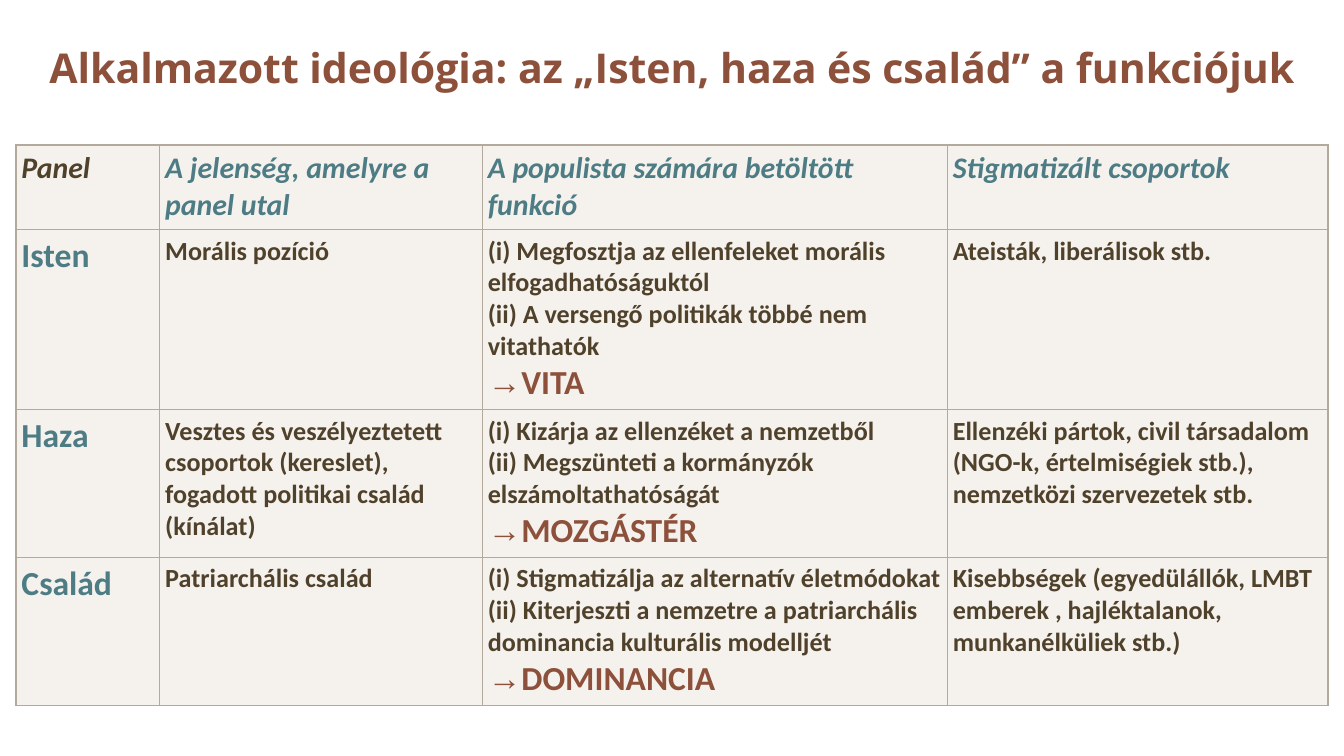
from copy import deepcopy

from lxml.etree import SubElement
from pptx import Presentation
from pptx.dml.color import RGBColor
from pptx.enum.text import MSO_ANCHOR, MSO_AUTO_SIZE, PP_ALIGN
from pptx.oxml.ns import qn
from pptx.util import Inches, Pt

COLORS = {
    "brown": "8D503B",
    "teal": "4D7C85",
    "dark": "50412B",
    "border": "B3A99D",
    "cell": "EFEAE4",
}
FORMATS = {
    "title": {"name": "Open Sans", "size": Pt(22), "bold": True, "color": "brown"},
    "corner": {"name": "Calibri", "size": Pt(16), "bold": True, "italic": True, "color": "dark"},
    "header": {"name": "Calibri", "size": Pt(16), "bold": True, "italic": True, "color": "teal"},
    "panel": {"name": "Calibri", "size": Pt(18), "bold": True, "italic": False, "color": "teal"},
    "body": {"name": "Calibri", "size": Pt(14), "bold": True, "italic": False, "color": "dark"},
    "result": {"name": "Calibri", "size": Pt(18), "bold": True, "italic": False, "color": "brown"},
}
ARROW = "→"
COLUMN_WIDTHS = [1.07, 2.4, 3.46, 2.83]
ROW_HEIGHTS = [0.63, 1.34, 1.1, 1.1]
# Each cell is a list of paragraphs; one that starts with the arrow is a result bullet.
ROWS = [
    [
        ["Panel"],
        ["A jelenség, amelyre a panel utal"],
        ["A populista számára betöltött funkció"],
        ["Stigmatizált csoportok"],
    ],
    [
        ["Isten"],
        ["Morális pozíció"],
        [
            "(i) Megfosztja az ellenfeleket morális elfogadhatóságuktól\n"
            "(ii) A versengő politikák többé nem vitathatók",
            "→VITA",
        ],
        ["Ateisták, liberálisok stb."],
    ],
    [
        ["Haza"],
        ["Vesztes és veszélyeztetett csoportok (kereslet), fogadott politikai család (kínálat)"],
        [
            "(i) Kizárja az ellenzéket a nemzetből\n"
            "(ii) Megszünteti a kormányzók elszámoltathatóságát",
            "→MOZGÁSTÉR",
        ],
        ["Ellenzéki pártok, civil társadalom (NGO-k, értelmiségiek stb.), nemzetközi szervezetek stb."],
    ],
    [
        ["Család"],
        ["Patriarchális család"],
        [
            "(i) Stigmatizálja az alternatív életmódokat",
            "(ii) Kiterjeszti a nemzetre a patriarchális dominancia kulturális modelljét",
            "→DOMINANCIA",
        ],
        ["Kisebbségek (egyedülállók, LMBT emberek , hajléktalanok, munkanélküliek stb.)"],
    ],
]


def add_formatted_text(paragraph, text, format_name):
    """Add one run a line, with line breaks of the same format between them."""
    for index, line in enumerate(text.split("\n")):
        if index:
            paragraph.add_line_break()
            paragraph._p[-1].append(deepcopy(run._r.rPr))
        run = paragraph.add_run()
        run.text = line
        for attribute, value in FORMATS[format_name].items():
            if attribute == "color":
                run.font.color.rgb = RGBColor.from_string(COLORS[value])
            else:
                setattr(run.font, attribute, value)


def add_title(slide, text):
    title = slide.shapes.title
    title.left, title.top = Inches(0.12), Inches(0)
    title.width, title.height = Inches(9.76), Inches(1)
    frame = title.text_frame
    frame.auto_size = MSO_AUTO_SIZE.NONE
    frame.word_wrap = True
    frame.vertical_anchor = MSO_ANCHOR.MIDDLE
    paragraph = frame.paragraphs[0]
    paragraph.alignment = PP_ALIGN.CENTER
    add_formatted_text(paragraph, text, "title")


def add_arrow_bullet(paragraph):
    properties = paragraph._p.get_or_add_pPr()
    properties.set("marL", "0")
    properties.set("indent", str(-Inches(0.31)))
    SubElement(properties, qn("a:buFont"), typeface="Arial")
    SubElement(properties, qn("a:buChar"), char=ARROW)


def set_borders(cell, row, column):
    """Draw thin inner lines and a thicker line around the whole table."""
    outer_sides = {
        "L": column == 0,
        "R": column == len(COLUMN_WIDTHS) - 1,
        "T": row == 0,
        "B": row == len(ROW_HEIGHTS) - 1,
    }
    properties = cell._tc.get_or_add_tcPr()
    for side, is_outer in outer_sides.items():
        width = Pt(1 if is_outer else 0.5)
        line = SubElement(properties, qn(f"a:ln{side}"), w=str(width))
        fill = SubElement(line, qn("a:solidFill"))
        SubElement(fill, qn("a:srgbClr"), val=COLORS["border"])


def set_fill(cell):
    """Fill the cell at 60 % opacity."""
    cell.fill.solid()
    cell.fill.fore_color.rgb = RGBColor.from_string(COLORS["cell"])
    color = cell._tc.tcPr.find(qn("a:solidFill")).find(qn("a:srgbClr"))
    SubElement(color, qn("a:alpha"), val="60000")


def cell_format(row, column):
    if row == 0:
        return "corner" if column == 0 else "header"
    return "panel" if column == 0 else "body"


def fill_cell(cell, texts, format_name):
    for side in ("left", "right", "top", "bottom"):
        setattr(cell, f"margin_{side}", Inches(0.04))
    cell.vertical_anchor = MSO_ANCHOR.TOP
    frame = cell.text_frame
    for index, text in enumerate(texts):
        paragraph = frame.add_paragraph() if index else frame.paragraphs[0]
        if text.startswith(ARROW):
            add_arrow_bullet(paragraph)
            add_formatted_text(paragraph, text.removeprefix(ARROW), "result")
        else:
            add_formatted_text(paragraph, text, format_name)


def add_panel_table(slide):
    table = slide.shapes.add_table(
        len(ROW_HEIGHTS), len(COLUMN_WIDTHS),
        Inches(0.12), Inches(1.08), Inches(sum(COLUMN_WIDTHS)), Inches(sum(ROW_HEIGHTS)),
    ).table
    table.first_row = table.horz_banding = False
    for column, width in zip(table.columns, COLUMN_WIDTHS):
        column.width = Inches(width)
    for row, height in zip(table.rows, ROW_HEIGHTS):
        row.height = Inches(height)
    for row, contents in enumerate(ROWS):
        for column, texts in enumerate(contents):
            cell = table.cell(row, column)
            fill_cell(cell, texts, cell_format(row, column))
            set_borders(cell, row, column)
            set_fill(cell)


def main():
    presentation = Presentation()
    presentation.slide_width = Inches(10)
    presentation.slide_height = Inches(10 * 9 / 16)
    slide = presentation.slides.add_slide(presentation.slide_layouts[5])
    add_title(slide, "Alkalmazott ideológia: az „Isten, haza és család” a funkciójuk")
    add_panel_table(slide)
    presentation.save("out.pptx")


if __name__ == "__main__":
    main()
